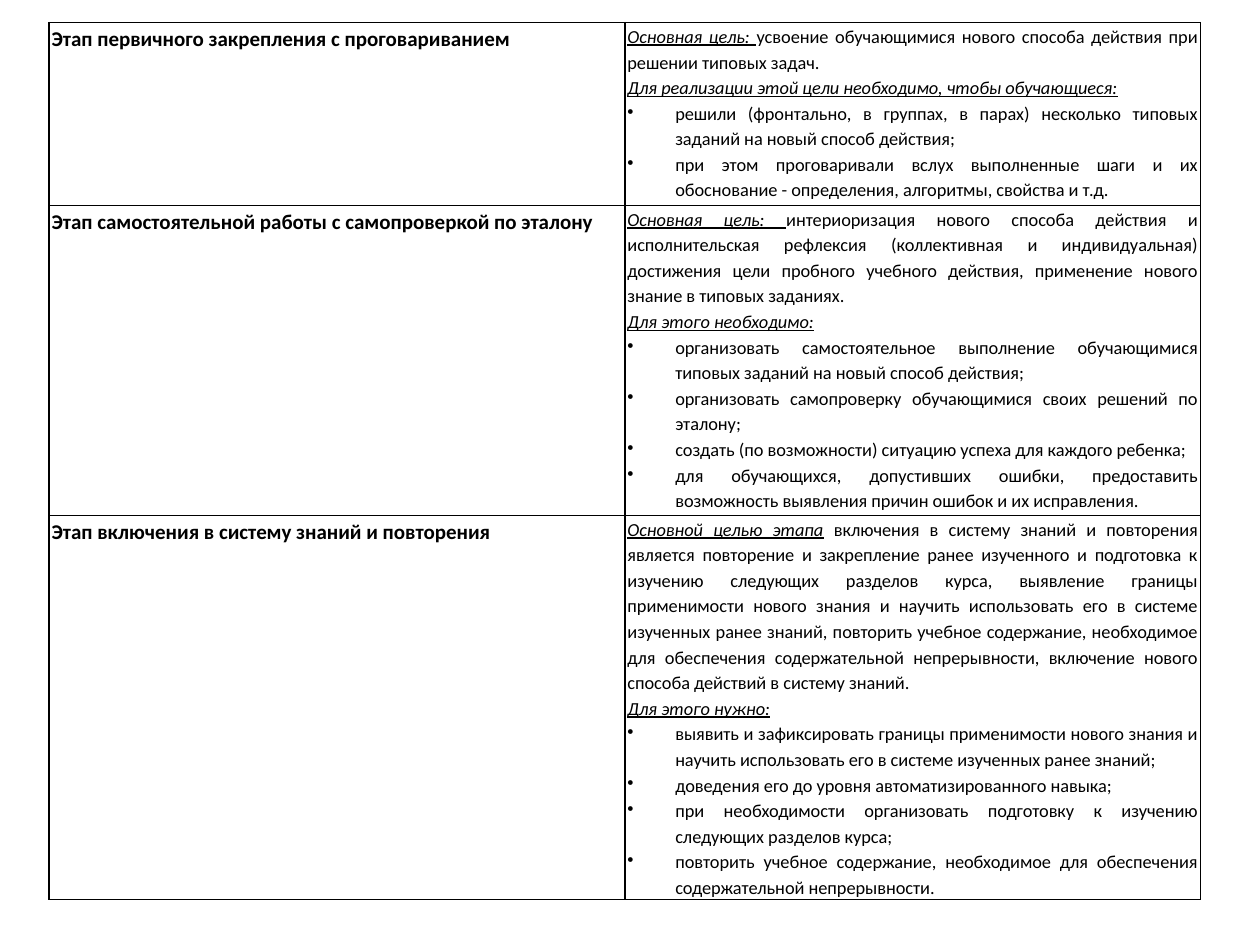
from lxml import etree
from pptx import Presentation
from pptx import util as u
from pptx.dml import color
from pptx.enum import text
from pptx.oxml import ns

# Each stage: name, goal label, goal, label of the list, list items
STAGES = [
    ("Этап первичного закрепления с проговариванием",
     "Основная цель: ",
     "усвоение обучающимися нового способа действия при решении типовых задач.",
     "Для реализации этой цели необходимо, чтобы обучающиеся:",
     ["решили (фронтально, в группах, в парах) несколько типовых заданий "
      "на новый способ действия;",
      "при этом проговаривали вслух выполненные шаги и их обоснование - "
      "определения, алгоритмы, свойства и т.д."]),
    ("Этап самостоятельной работы с самопроверкой по эталону",
     "Основная цель: ",
     "интериоризация нового способа действия и исполнительская рефлексия "
     "(коллективная и индивидуальная) достижения цели пробного учебного "
     "действия, применение нового знание в типовых заданиях.",
     "Для этого необходимо:",
     ["организовать самостоятельное выполнение обучающимися типовых заданий "
      "на новый способ действия;",
      "организовать самопроверку обучающимися своих решений по эталону;",
      "создать (по возможности) ситуацию успеха для каждого ребенка;",
      "для обучающихся, допустивших ошибки, предоставить возможность "
      "выявления причин ошибок и их исправления."]),
    ("Этап включения в систему знаний и повторения",
     "Основной целью этапа",
     " включения в систему знаний и повторения является повторение и "
     "закрепление ранее изученного и подготовка к изучению следующих разделов "
     "курса, выявление границы применимости нового знания и научить "
     "использовать его в системе изученных ранее знаний, повторить учебное "
     "содержание, необходимое для обеспечения содержательной непрерывности, "
     "включение нового способа действий в систему знаний.",
     "Для этого нужно:",
     ["выявить и зафиксировать границы применимости нового знания и научить "
      "использовать его в системе изученных ранее знаний;",
      "доведения его до уровня автоматизированного навыка;",
      "при необходимости организовать подготовку к изучению следующих "
      "разделов курса;",
      "повторить учебное содержание, необходимое для обеспечения "
      "содержательной непрерывности."]),
]
ROW_HEIGHTS = [1.45, 2.46, 3.02]
COLUMN_WIDTH = 4.57


def rgb(value):
    return color.RGBColor.from_string(value)


class StageTable:
    font = "Calibri"
    ink = "000000"
    name_size = 12
    body_size = 10.5
    line_spacing = 1.15
    side_margin = 0.02
    indent = 0.38
    tab = 0.5
    border = 1

    def __init__(self, page):
        self.page = page

    def add_table(self, left, top, column_width, row_heights):
        frame = self.page.shapes.add_table(
            len(row_heights), 2, u.Inches(left), u.Inches(top),
            u.Inches(2 * column_width), u.Inches(sum(row_heights)))
        table = frame.table
        table.first_row = table.horz_banding = False
        for column in table.columns:
            column.width = u.Inches(column_width)
        for row, height in zip(table.rows, row_heights):
            row.height = u.Inches(height)
            for cell in row.cells:
                self.format_cell(cell)
        return table

    def format_cell(self, cell):
        cell.margin_left = cell.margin_right = u.Inches(self.side_margin)
        cell.margin_top = cell.margin_bottom = 0
        cell.fill.background()
        props = cell._tc.get_or_add_tcPr()
        # Borders come before the fill
        for place, side in enumerate(("lnL", "lnR", "lnT", "lnB")):
            line = etree.Element(ns.qn("a:" + side), w=str(u.Pt(self.border)))
            fill = etree.SubElement(line, ns.qn("a:solidFill"))
            etree.SubElement(fill, ns.qn("a:srgbClr"), val=self.ink)
            props.insert(place, line)

    def add_para(self, cell, bullet=False):
        frame = cell.text_frame
        para = frame.paragraphs[0]
        if para.runs:
            para = frame.add_paragraph()
        para.alignment = text.PP_ALIGN.JUSTIFY
        para.line_spacing = self.line_spacing
        if bullet:
            props = para._p.get_or_add_pPr()
            props.set("marL", str(u.Inches(self.indent)))
            props.set("indent", str(-u.Inches(self.indent)))
            etree.SubElement(props, ns.qn("a:buChar"), char="•")
            tabs = etree.SubElement(props, ns.qn("a:tabLst"))
            etree.SubElement(tabs, ns.qn("a:tab"),
                             pos=str(u.Inches(self.tab)), algn="l")
        return para

    def add_span(self, para, words, size=body_size, bold=False, label=False):
        span = para.add_run()
        span.text = words
        span.font.name = self.font
        span.font.size = u.Pt(size)
        span.font.bold = bold
        span.font.italic = span.font.underline = label
        span.font.color.rgb = rgb(self.ink)

    def fill_row(self, row, stage):
        name, goal_label, goal, list_label, items = stage
        name_cell, body_cell = row.cells
        self.add_span(self.add_para(name_cell), name, self.name_size, bold=True)
        para = self.add_para(body_cell)
        self.add_span(para, goal_label, label=True)
        self.add_span(para, goal)
        self.add_span(self.add_para(body_cell), list_label, label=True)
        for item in items:
            self.add_span(self.add_para(body_cell, bullet=True), item)


def main():
    deck = Presentation()
    deck.slide_width, deck.slide_height = u.Inches(10), u.Inches(7.5)
    page = deck.slides.add_slide(deck.slide_layouts[6])

    # Table of lesson stages
    builder = StageTable(page)
    table = builder.add_table(0.39, 0.18, COLUMN_WIDTH, ROW_HEIGHTS)
    for row, stage in zip(table.rows, STAGES):
        builder.fill_row(row, stage)

    deck.save("out.pptx")


if __name__ == "__main__":
    main()
